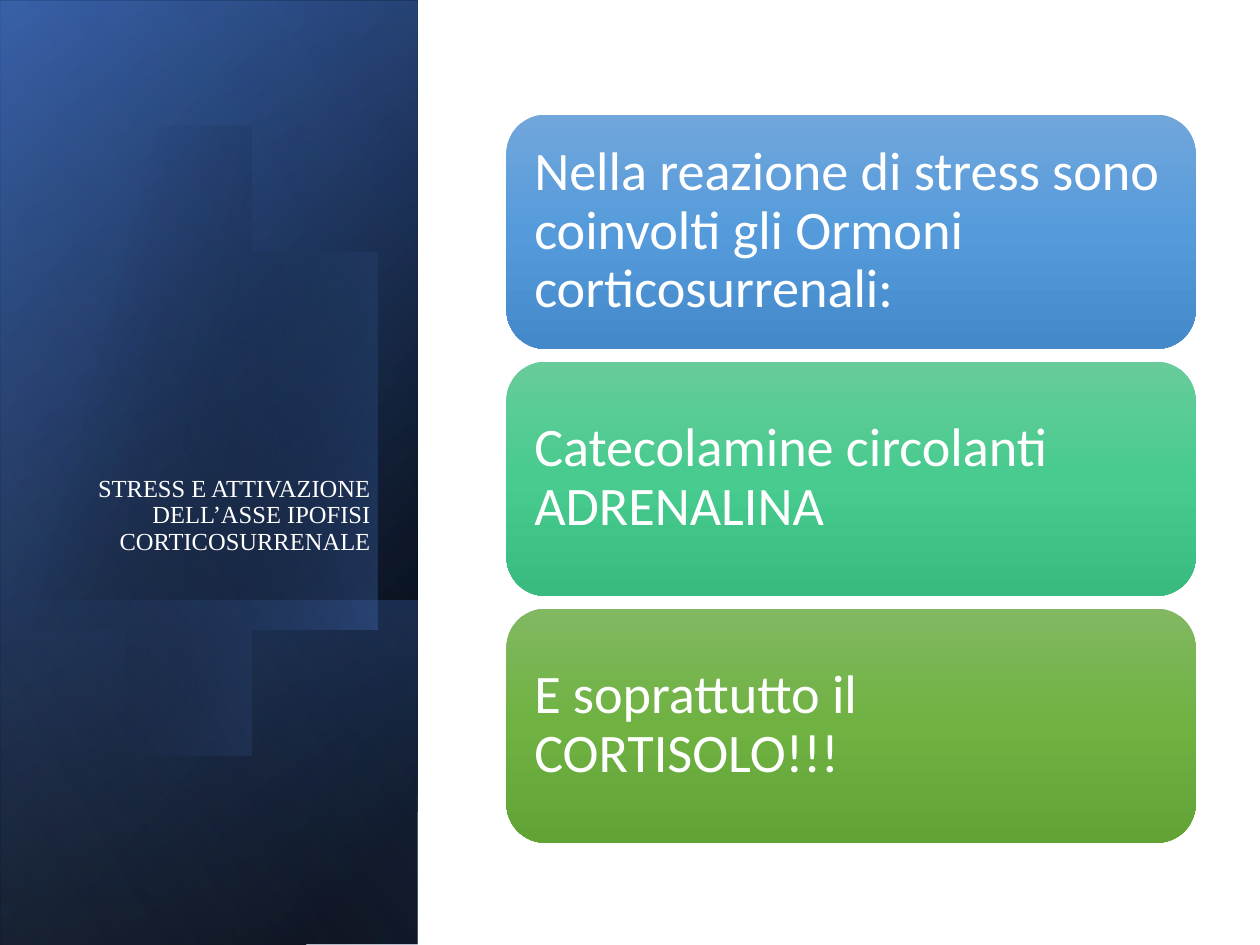
from dataclasses import dataclass
from typing import NamedTuple

from lxml import etree
from pptx import Presentation
from pptx import util as u
from pptx.dml.color import RGBColor
from pptx.enum import shapes, text
from pptx.oxml import ns


class Stop(NamedTuple):
    pos: int
    color: str
    alpha: int = 100


class Panel(NamedTuple):
    box: tuple[float, float, float, float]
    stops: list[Stop]
    angle: int


class Card(NamedTuple):
    words: str
    colors: tuple[str, str, str]


@dataclass(frozen=True)
class Theme:
    white: str = "FFFFFF"
    black: str = "000000"
    blue: str = "4472C4"
    navy: str = "2F5597"
    pale: str = "8FAADC"
    serif: str = "Times New Roman"
    sans: str = "Calibri"
    small: int = 14
    large: int = 31


THEME = Theme()

# Side panel layers, each turned a quarter and mirrored
BASE = [
    Panel((-2.09, 2.09, 7.5, 3.31), [Stop(8, THEME.black), Stop(100, THEME.navy)], 50),
    Panel((-2.09, 2.11, 7.5, 3.31), [Stop(0, THEME.black, 0), Stop(99, THEME.blue, 46)], 30),
    Panel((0.29, 4.48, 2.74, 3.31), [Stop(2, THEME.blue, 29), Stop(100, THEME.black, 30)], 130),
]
GLOSS = Panel((-2.09, 2.09, 7.5, 3.31), [Stop(0, THEME.black, 0), Stop(99, THEME.pale, 11)], 120)

# Oval outline: each entry is a curve (three points) or a line (one point)
START = (0.96, 1.14)
OVAL = [
    [(1.71, 1.22), (2.44, 1.92), (2.73, 2.9)],
    [(3.07, 4.12), (2.62, 5.31), (1.71, 5.57)],
    [(1.14, 5.74), (0.53, 5.5), (0.07, 5)],
    [(-0.03, 4.88)],
    [(-0.25, 1.66)],
    [(-0.15, 1.54)],
    [(0.02, 1.37), (0.22, 1.25), (0.45, 1.18)],
    [(0.62, 1.13), (0.79, 1.12), START],
]

CARDS = [
    Card("Nella reazione di stress sono coinvolti gli Ormoni corticosurrenali:",
         ("71A6DB", "559BDB", "448ACA")),
    Card("Catecolamine circolanti ADRENALINA", ("67CC9A", "47CB8E", "39BB7F")),
    Card("E soprattutto il CORTISOLO!!!", ("81B861", "6FB242", "62A336")),
]


def shade(shape, stops: list[Stop], angle: int) -> None:
    """Give the shape a linear gradient, without line or shadow."""
    shape.shadow.inherit = False
    shape.line.fill.background()
    shape.fill.gradient()
    grad = shape._element.spPr.find(ns.qn("a:gradFill"))
    for child in list(grad):
        grad.remove(child)
    row = etree.SubElement(grad, ns.qn("a:gsLst"))
    for stop in stops:
        mark = etree.SubElement(row, ns.qn("a:gs"), pos=str(stop.pos * 1000))
        tint = etree.SubElement(mark, ns.qn("a:srgbClr"), val=stop.color)
        if stop.alpha < 100:
            etree.SubElement(tint, ns.qn("a:alpha"), val=str(stop.alpha * 1000))
    etree.SubElement(grad, ns.qn("a:lin"), ang=str(angle * 60000), scaled="0")


def style(frame, words: str, font: str, size: int, align, anchor) -> None:
    frame.word_wrap = True
    frame.vertical_anchor = anchor
    frame.text = words
    para = frame.paragraphs[0]
    para.alignment = align
    para.line_spacing = 0.9
    face = para.runs[0].font
    face.name = font
    face.size = u.Pt(size)
    face.color.rgb = RGBColor.from_string(THEME.white)


def draw_panel(slide, panel: Panel) -> None:
    shape = slide.shapes.add_shape(shapes.MSO_SHAPE.RECTANGLE, *map(u.Inches, panel.box))
    shape.rotation = 90
    shape._element.spPr.xfrm.set("flipH", "1")
    shade(shape, panel.stops, panel.angle)


def trace(steps: int = 24) -> list[tuple[float, float]]:
    """Turn the oval's curves into short straight steps."""
    points, last = [], START
    for part in OVAL:
        if len(part) == 1:
            points += part
        else:
            one, two, end = part
            for i in range(1, steps + 1):
                t = i / steps
                s = 1 - t
                points.append(tuple(
                    s**3 * a + 3 * s * s * t * b + 3 * s * t * t * c + t**3 * d
                    for a, b, c, d in zip(last, one, two, end)))
        last = part[-1]
    return points


def draw_oval(slide) -> None:
    pen = slide.shapes.build_freeform(*START, scale=u.Inches(1))
    pen.add_line_segments(trace(), close=True)
    shade(pen.convert_to_shape(), [Stop(29, THEME.black, 0), Stop(100, THEME.blue, 43)], 14)


def draw_title(slide) -> None:
    box = slide.shapes.add_textbox(*map(u.Inches, (0.48, 1.84, 2.56, 2.62)))
    style(box.text_frame, "STRESS E ATTIVAZIONE DELL’ASSE IPOFISI CORTICOSURRENALE",
          THEME.serif, THEME.small, text.PP_ALIGN.RIGHT, text.MSO_ANCHOR.BOTTOM)


def draw_card(slide, card: Card, top: float) -> None:
    shape = slide.shapes.add_shape(
        shapes.MSO_SHAPE.ROUNDED_RECTANGLE, *map(u.Inches, (4.02, top, 5.47, 1.86)))
    shade(shape, [Stop(*pair) for pair in zip((0, 50, 100), card.colors)], 90)
    frame = shape.text_frame
    frame.margin_left = frame.margin_right = u.Inches(0.13)
    frame.margin_top = frame.margin_bottom = u.Inches(0.13)
    style(frame, card.words, THEME.sans, THEME.large,
          text.PP_ALIGN.LEFT, text.MSO_ANCHOR.MIDDLE)


def main() -> None:
    deck = Presentation()
    deck.slide_width, deck.slide_height = u.Inches(10), u.Inches(7.5)
    slide = deck.slides.add_slide(deck.slide_layouts[6])

    # Side panel with title
    for panel in BASE:
        draw_panel(slide, panel)
    draw_oval(slide)
    draw_panel(slide, GLOSS)
    draw_title(slide)

    # Stacked cards
    for i, card in enumerate(CARDS):
        draw_card(slide, card, 0.91 + 1.96 * i)

    deck.save("out.pptx")


if __name__ == "__main__":
    main()
